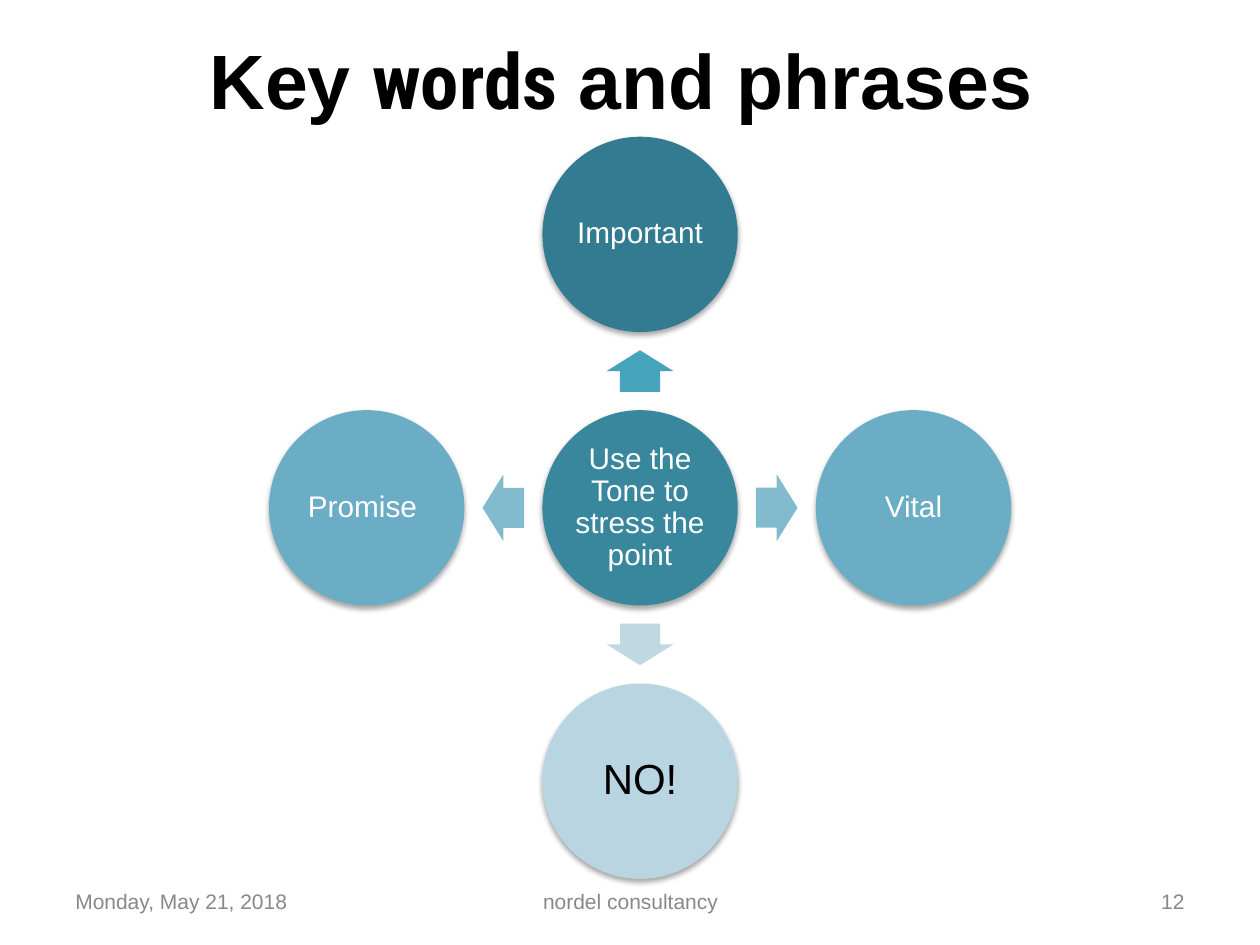
import lxml.etree
import pptx
import pptx.dml.color
import pptx.enum.shapes
import pptx.enum.text
import pptx.oxml
import pptx.oxml.ns
import pptx.util

Inches = pptx.util.Inches
ALIGN = pptx.enum.text.PP_ALIGN
SHAPES = pptx.enum.shapes.MSO_SHAPE


def color(hex_string):
    return pptx.dml.color.RGBColor.from_string(hex_string)


def write(shape, runs, size, text_color, alignment, margins=(0.1, 0.05), spacing=1, bold=False):
    frame = shape.text_frame
    frame_format = {
        "word_wrap": True,
        "auto_size": pptx.enum.text.MSO_AUTO_SIZE.NONE,
        "vertical_anchor": pptx.enum.text.MSO_ANCHOR.MIDDLE,
        "margin_left": Inches(margins[0]), "margin_right": Inches(margins[0]),
        "margin_top": Inches(margins[1]), "margin_bottom": Inches(margins[1]),
    }
    for name, value in frame_format.items():
        setattr(frame, name, value)
    paragraph = frame.paragraphs[0]
    paragraph.alignment = alignment
    paragraph.line_spacing = spacing
    for text, font_name in runs:
        run = paragraph.add_run()
        run.text = text
        font_format = {"name": font_name, "size": pptx.util.Pt(size), "bold": bold}
        for name, value in font_format.items():
            setattr(run.font, name, value)
        run.font.color.rgb = color(text_color)


presentation = pptx.Presentation()
presentation.slide_width = Inches(10)
presentation.slide_height = Inches(7.5)
slide = presentation.slides.add_slide(presentation.slide_layouts[5])

# Title
title = slide.shapes.title
title_place = {"left": 0.43, "top": 0, "width": 9, "height": 1.25}
for name, value in title_place.items():
    setattr(title, name, Inches(value))
write(title, [("Key ", "Arial"), ("words", "Roboto Condensed"), (" and phrases", "Arial")],
      44, "000000", ALIGN.CENTER, bold=True)

# Radial grid: circles one pitch from the hub, arrows half a pitch
center_x, center_y = 5.08, 4.03
pitch = 2.17
diameter = 1.55
arrow_width, arrow_height = 0.33, 0.53

# Arrows: column, row, rotation, fill
arrows = [
    (0, -1, 270, "46A3BC"),
    (1, 0, 0, "83BBCE"),
    (0, 1, 90, "BFD9E3"),
    (-1, 0, 180, "83BBCE"),
]
for column, row, rotation, fill in arrows:
    arrow = slide.shapes.add_shape(
        SHAPES.RIGHT_ARROW,
        Inches(center_x + column * pitch / 2 - arrow_width / 2),
        Inches(center_y + row * pitch / 2 - arrow_height / 2),
        Inches(arrow_width), Inches(arrow_height))
    arrow.adjustments[0] = 0.6
    arrow.adjustments[1] = 0.5
    arrow.rotation = rotation
    arrow.shadow.inherit = False
    arrow.fill.solid()
    arrow.fill.fore_color.rgb = color(fill)
    arrow.line.fill.background()

# Circles: column, row, text, fill, text size, text color
circles = [
    (0, 0, "Use the Tone to stress the point", "38879C", 17, "FFFFFF"),
    (0, -1, "Important", "337B90", 17, "FFFFFF"),
    (1, 0, "Vital", "6AADC4", 17, "FFFFFF"),
    (0, 1, "NO!", "B8D5E1", 24, "000000"),
    (-1, 0, "Promise ", "6AADC4", 17, "FFFFFF"),
]
shadow_xml = (
    f'<a:outerShdw {pptx.oxml.ns.nsdecls("a")} blurRad="40000" dist="23000" dir="5400000" '
    'rotWithShape="0"><a:srgbClr val="000000"><a:alpha val="35000"/></a:srgbClr></a:outerShdw>')
for column, row, text, fill, size, text_color in circles:
    circle = slide.shapes.add_shape(
        SHAPES.OVAL,
        Inches(center_x + column * pitch - diameter / 2),
        Inches(center_y + row * pitch - diameter / 2),
        Inches(diameter), Inches(diameter))
    circle.fill.solid()
    circle.fill.fore_color.rgb = color(fill)
    circle.line.fill.background()
    circle.shadow.inherit = False
    effects = circle._element.spPr.find(pptx.oxml.ns.qn("a:effectLst"))
    effects.append(pptx.oxml.parse_xml(shadow_xml))
    write(circle, [(text, "Arial")], size, text_color, ALIGN.CENTER, (0.02, 0.02), 0.9)

# Footer: left, width, text, alignment
footers = [
    (0.5, 2.33, "Monday, May 21, 2018", ALIGN.LEFT),
    (3.42, 3.17, "nordel consultancy", ALIGN.CENTER),
    (7.17, 2.33, "12", ALIGN.RIGHT),
]
for left, width, text, alignment in footers:
    footer = slide.shapes.add_textbox(Inches(left), Inches(6.95), Inches(width), Inches(0.4))
    write(footer, [(text, "Arial")], 12, "888888", alignment)

presentation.save("out.pptx")
